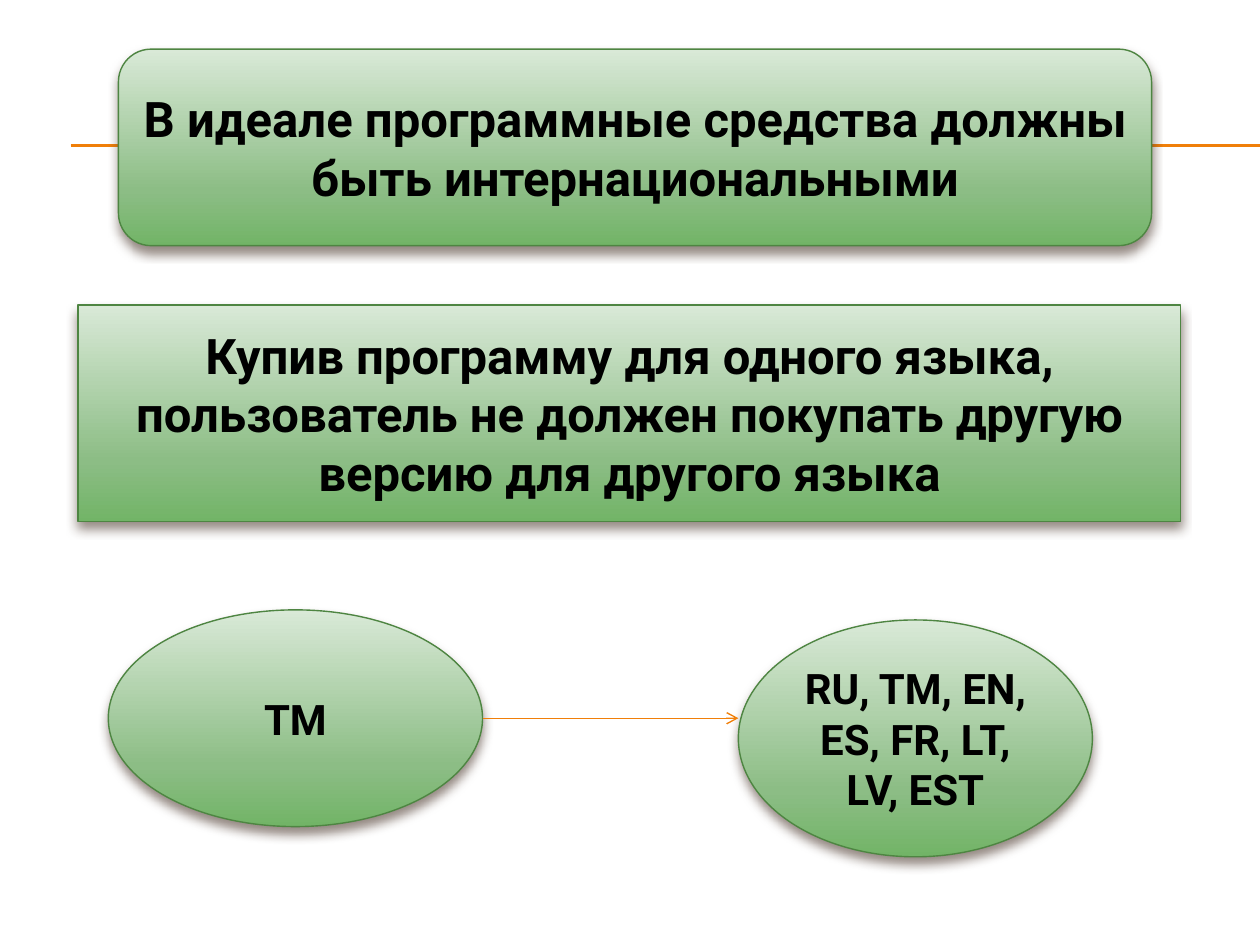
from lxml.etree import SubElement
from pptx import Presentation
from pptx.dml.color import RGBColor
from pptx.enum.shapes import MSO_CONNECTOR as Connector, MSO_SHAPE as Shape
from pptx.enum.text import MSO_ANCHOR as Anchor, PP_ALIGN as Align
from pptx.oxml.ns import qn
from pptx.util import Inches, Pt

COLORS = {
    "light": "D9E9D7", "middle": "8CBD85", "deep": "72B467",
    "outline": "4E8542", "shadow": "4E3B30", "accent": "F07F09", "text": "000000",
}
GRADIENT = [(0, "light"), (72, "middle"), (100, "deep")]

presentation = Presentation()
presentation.slide_width, presentation.slide_height = Inches(10), Inches(7.5)
slide = presentation.slides.add_slide(presentation.slide_layouts[6])

# Lengths are counted in a grid of 1000 columns and 750 rows
COLUMN = presentation.slide_width / 1000
ROW = presentation.slide_height / 750


def add_color(parent, name):
    return SubElement(parent, qn("a:srgbClr"), val=COLORS[name])


def add_line(left, right, row, width):
    line = slide.shapes.add_connector(
        Connector.STRAIGHT, round(left * COLUMN), round(row * ROW),
        round(right * COLUMN), round(row * ROW))
    line.line.color.rgb = RGBColor.from_string(COLORS["accent"])
    line.line.width = Pt(width)
    SubElement(line._element.spPr, qn("a:effectLst"))
    return line


# Double rule behind the title
for row in (115, 116):
    add_line(56, 1000, row, 0.75)

# Title, statement and the two language groups
panels = [
    (Shape.ROUNDED_RECTANGLE, 94, 39, 820, 156, 28,
     "В идеале программные средства должны быть интернациональными"),
    (Shape.RECTANGLE, 62, 242, 875, 172, 28,
     "Купив программу для одного языка, пользователь не должен покупать "
     "другую версию для другого языка"),
    (Shape.OVAL, 86, 484, 297, 172, 24, "TM"),
    (Shape.OVAL, 586, 492, 281, 188, 24, "RU, TM, EN, ES, FR, LT, LV, EST"),
]
for kind, left, top, width, height, size, text in panels:
    shape = slide.shapes.add_shape(
        kind, round(left * COLUMN), round(top * ROW),
        round(width * COLUMN), round(height * ROW))

    # Three-stop gradient from top to bottom, with a thin outline
    shape.fill.gradient()
    shape.fill.gradient_angle = 270
    stops = shape._element.spPr.find(".//" + qn("a:gsLst"))
    for stop in list(stops):
        stops.remove(stop)
    for position, name in GRADIENT:
        add_color(SubElement(stops, qn("a:gs"), pos=str(position * 1000)), name)
    shape.line.color.rgb = RGBColor.from_string(COLORS["outline"])
    shape.line.width = Pt(0.79)

    # Soft shadow below
    shape.shadow.inherit = False
    effects = shape._element.spPr.find(qn("a:effectLst"))
    shadow = SubElement(effects, qn("a:outerShdw"), blurRad=str(Pt(6)),
                        dist=str(Pt(4)), dir="5400000", rotWithShape="0")
    SubElement(add_color(shadow, "shadow"), qn("a:alpha"), val="60000")

    # Centred bold text
    frame = shape.text_frame
    frame.word_wrap = True
    frame.vertical_anchor = Anchor.MIDDLE
    paragraph = frame.paragraphs[0]
    paragraph.alignment = Align.CENTER
    run = paragraph.add_run()
    run.text = text
    run.font.name = "Roboto"
    run.font.size = Pt(size)
    run.font.bold = True
    run.font.color.rgb = RGBColor.from_string(COLORS["text"])

# Arrow from one language to many
arrow = add_line(383, 586, 570, 0.79)
SubElement(arrow.line._get_or_add_ln(), qn("a:tailEnd"), type="arrow")

presentation.save("out.pptx")
